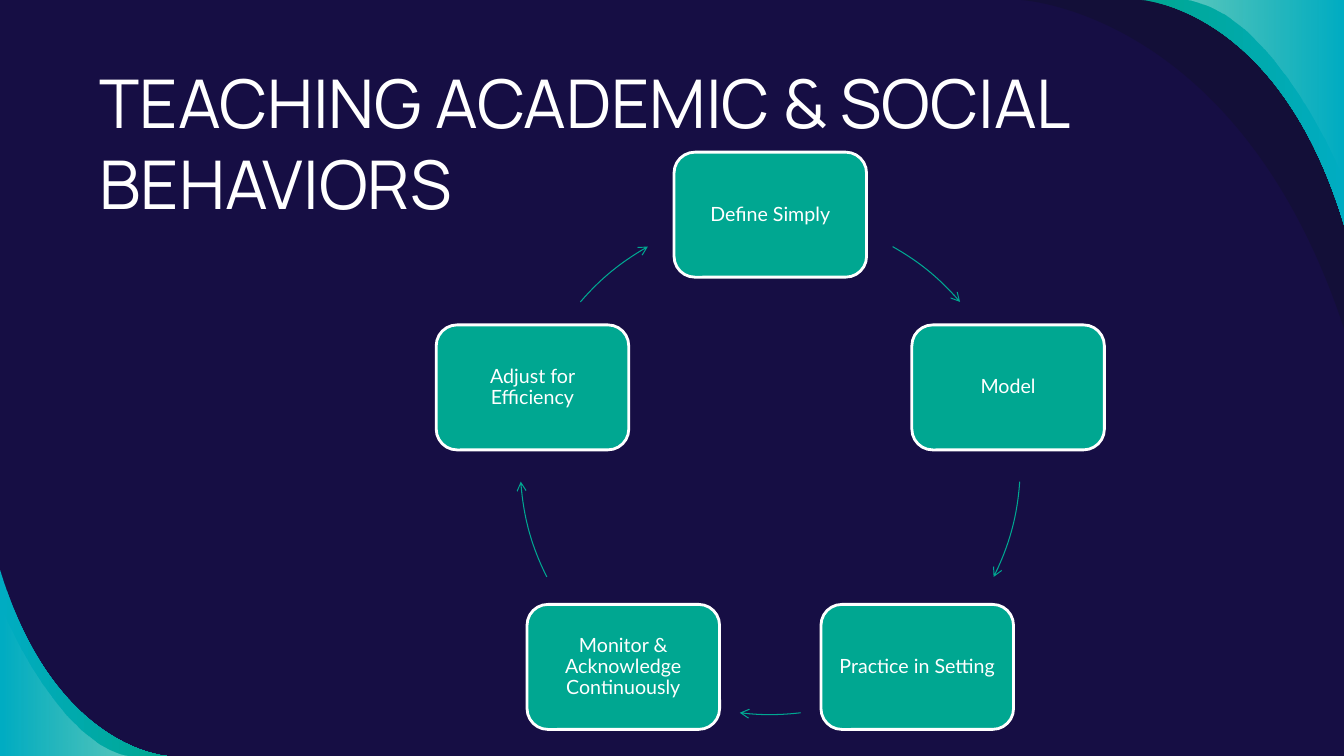
from math import cos, radians, sin

from lxml.etree import SubElement
from pptx import Presentation
from pptx.dml.color import RGBColor
from pptx.enum.shapes import MSO_SHAPE as Shape
from pptx.enum.text import MSO_ANCHOR as Anchor, PP_ALIGN as Align
from pptx.oxml.ns import qn
from pptx.util import Inches, Pt

COLORS = {"bg": "160E44", "shade": "12102F", "cyan": "00ACC2",
          "teal": "00A791", "white": "FFFFFF"}

TITLE = "TEACHING ACADEMIC & SOCIAL BEHAVIORS"
STEPS = ["Define Simply", "Model", "Practice in Setting",
         "Monitor & Acknowledge Continuously", "Adjust for Efficiency"]
ARROW_ANGLES = [(299.3, 319.4), (3.9, 26.7), (83, 97), (153.3, 176.1), (220.6, 240.7)]

CENTER_X, CENTER_Y, RADIUS = 7.64, 4.61, 2.48
CARD_W, CARD_H = 1.91, 1.24

CYAN_TEAL = [("cyan", 100), ("teal", 100)]
GLOW = [("white", 0), ("white", 36)]
CORNERS = [
    ([(1.66, 7.5), (1.66, 7.5), (0.54, 7.44), (0, 5.65)], (0, 7.5), CYAN_TEAL),
    ([(0, 6.01), (0, 6.01), (0.56, 7.41), (1.32, 7.5)], (0, 7.5), GLOW),
    ([(13.33, 3.26), (12.29, 0.1), (10.12, 0), (10.12, 0)], (13.33, 0), [("shade", 54)]),
    ([(11.32, 0), (11.32, 0), (12.68, 0.07), (13.33, 2.23)], (13.33, 0), CYAN_TEAL[::-1]),
    ([(13.33, 1.8), (13.33, 1.8), (12.66, 0.11), (11.74, 0)], (13.33, 0), GLOW[::-1]),
]

prs = Presentation()
prs.slide_width, prs.slide_height = Inches(13.33), Inches(7.5)
slide = prs.slides.add_slide(prs.slide_layouts[6])
shapes = slide.shapes


def rgb(name):
    return RGBColor.from_string(COLORS[name])


def add_corner(curve, corner, stops):
    outline = [(Inches(x), Inches(y)) for x, y in curve + [corner]]
    builder = shapes.build_freeform(*outline[0], scale=1.0)
    builder.add_line_segments(outline[1:], close=True)
    s = builder.convert_to_shape()
    sides = list(s._element.spPr.iter(qn("a:lnTo")))[:3]
    bend = SubElement(sides[0].getparent(), qn("a:cubicBezTo"))
    sides[0].addprevious(bend)
    for side in sides:
        bend.append(side[0])
        side.getparent().remove(side)
    s.shadow.inherit = False
    if len(stops) == 1:
        s.fill.solid()
        s.fill.fore_color.rgb = rgb(stops[0][0])
    else:
        s.fill.gradient()
        s.fill.gradient_angle = 0
        for stop, (name, _) in zip(s.fill.gradient_stops, stops):
            stop.color.rgb = rgb(name)
    for color, (_, opacity) in zip(s._element.spPr.iter(qn("a:srgbClr")), stops):
        if opacity < 100:
            SubElement(color, qn("a:alpha"), val=str(opacity * 1000))
    s.line.fill.background()


def write(s, text, size, font, margin, spacing=1.0, align=Align.LEFT, anchor=Anchor.TOP):
    tf = s.text_frame
    tf.word_wrap = True
    tf.vertical_anchor = anchor
    tf.margin_left = tf.margin_right = tf.margin_top = tf.margin_bottom = Inches(margin)
    p = tf.paragraphs[0]
    p.alignment = align
    p.line_spacing = spacing
    r = p.add_run()
    r.text = text
    r.font.size = Pt(size)
    r.font.name = font
    r.font.color.rgb = rgb("white")


def add_card(text, angle):
    x = CENTER_X + RADIUS * cos(radians(angle)) - CARD_W / 2
    y = CENTER_Y + RADIUS * sin(radians(angle)) - CARD_H / 2
    s = shapes.add_shape(Shape.ROUNDED_RECTANGLE, Inches(x), Inches(y),
                         Inches(CARD_W), Inches(CARD_H))
    s.shadow.inherit = False
    s.fill.solid()
    s.fill.fore_color.rgb = rgb("teal")
    s.line.color.rgb = rgb("white")
    s.line.width = Pt(2)
    write(s, text, 14, "Lato", 0.06, spacing=0.9, align=Align.CENTER, anchor=Anchor.MIDDLE)


def add_arrow(start, end):
    s = shapes.add_shape(Shape.ARC, Inches(CENTER_X - RADIUS), Inches(CENTER_Y - RADIUS),
                         Inches(2 * RADIUS), Inches(2 * RADIUS))
    s.adjustments[0], s.adjustments[1] = start * 0.6, end * 0.6
    s.shadow.inherit = False
    s.fill.background()
    s.line.color.rgb = rgb("teal")
    s.line.width = Pt(0.75)
    SubElement(s.line._get_or_add_ln(), qn("a:tailEnd"), type="arrow")


slide.background.fill.solid()
slide.background.fill.fore_color.rgb = rgb("bg")
for curve, corner, stops in CORNERS:
    add_corner(curve, corner, stops)

title = shapes.add_textbox(Inches(0.89), Inches(0.51), Inches(11.15), Inches(0.92))
write(title, TITLE, 48, "Manrope", 0.1)

for i, (step, angles) in enumerate(zip(STEPS, ARROW_ANGLES)):
    add_card(step, 360 / len(STEPS) * i - 90)
    add_arrow(*angles)

prs.save("out.pptx")
